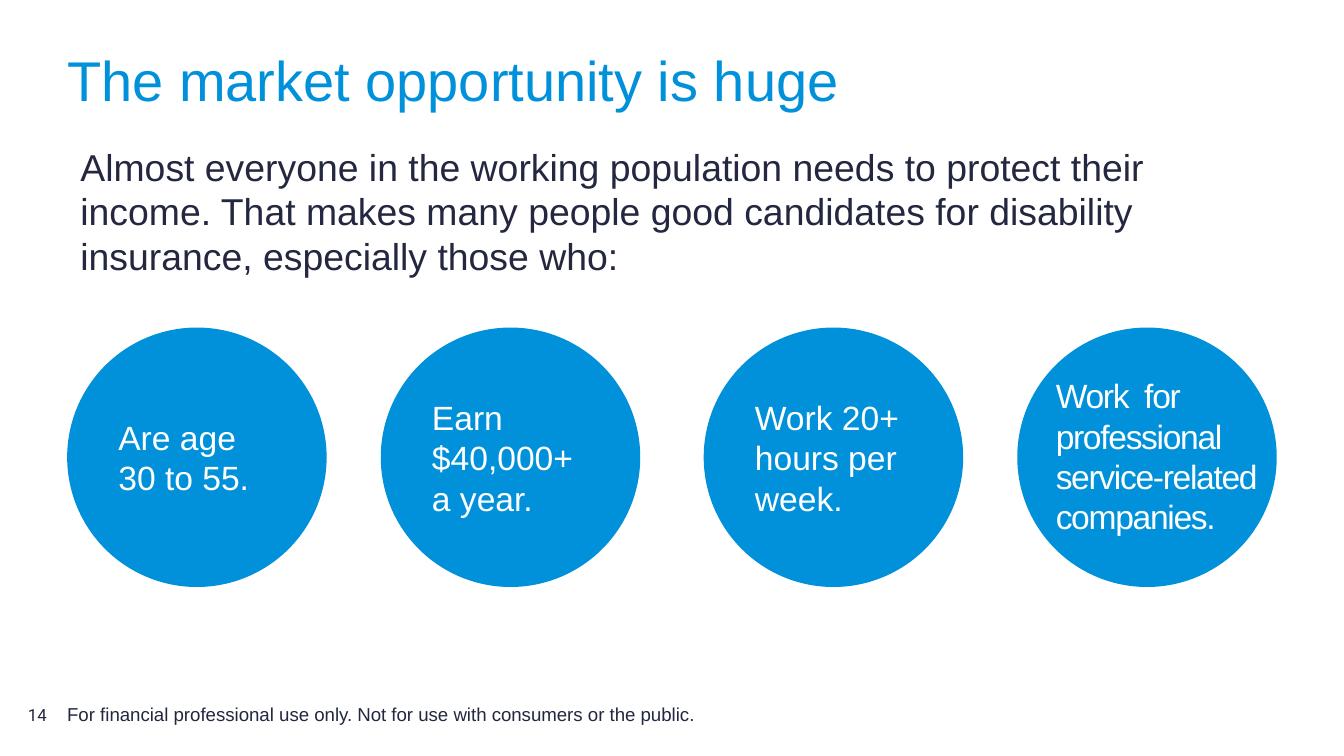
"""Build the slide on the market opportunity for disability insurance."""
from pptx import Presentation
from pptx.dml.color import RGBColor
from pptx.enum.shapes import MSO_SHAPE
from pptx.enum.text import MSO_ANCHOR, PP_ALIGN
from pptx.util import Pt

BLUE = RGBColor(0x00, 0x91, 0xDA)
NAVY = RGBColor(0x23, 0x27, 0x3F)
WHITE = RGBColor(0xFF, 0xFF, 0xFF)


def write(shape, text, size, color, font="Arial", anchor=MSO_ANCHOR.TOP):
    frame = shape.text_frame
    frame.word_wrap = True
    frame.vertical_anchor = anchor
    paragraph = frame.paragraphs[0]
    paragraph.text = text
    paragraph.alignment = PP_ALIGN.LEFT
    paragraph.font.size = Pt(size)
    paragraph.font.name = font
    paragraph.font.color.rgb = color
    return paragraph


def add_text(box, text, size, color, font="Arial", anchor=MSO_ANCHOR.TOP, inset=True):
    shape = slide.shapes.add_textbox(*[Pt(length) for length in box])
    if not inset:
        frame = shape.text_frame
        frame.margin_left = frame.margin_right = 0
        frame.margin_top = frame.margin_bottom = 0
    return write(shape, text, size, color, font, anchor)


presentation = Presentation()
presentation.slide_width = Pt(720)
presentation.slide_height = Pt(405)
slide = presentation.slides.add_slide(presentation.slide_layouts[6])

title = add_text((36, 31.5, 648, 42), "The market opportunity is huge", 30, BLUE, inset=False)
title.line_spacing = 0.8

add_text((15, 367, 21, 21.6), "14", 9, NAVY, "Roboto", MSO_ANCHOR.BOTTOM, False)
add_text(
    (36, 367, 471, 21.6),
    "For financial professional use only. Not for use with consumers or the public.",
    10, NAVY, anchor=MSO_ANCHOR.BOTTOM, inset=False,
)
add_text(
    (36, 73.5, 648, 80),
    "Almost everyone in the working population needs to protect their income. "
    "That makes many people good candidates for disability insurance, especially those who:",
    20, NAVY,
)

circles = [
    (36, "Are age 30 to 55."),
    (204, "Earn $40,000+ a year."),
    (377, "Work 20+ hours per week."),
    (545, ""),
]
for left, text in circles:
    circle = slide.shapes.add_shape(MSO_SHAPE.OVAL, Pt(left), Pt(175.5), Pt(139), Pt(139))
    circle.shadow.inherit = False
    circle.fill.solid()
    circle.fill.fore_color.rgb = BLUE
    circle.line.fill.background()
    if text:
        write(circle, text, 18, WHITE, anchor=MSO_ANCHOR.MIDDLE)

companies = add_text(
    (558.5, 197.5, 125.5, 94.5),
    "Work  for professional service-related companies.",
    18, WHITE,
)
companies.runs[0].font._element.set("spc", "-70")

presentation.save("out.pptx")
